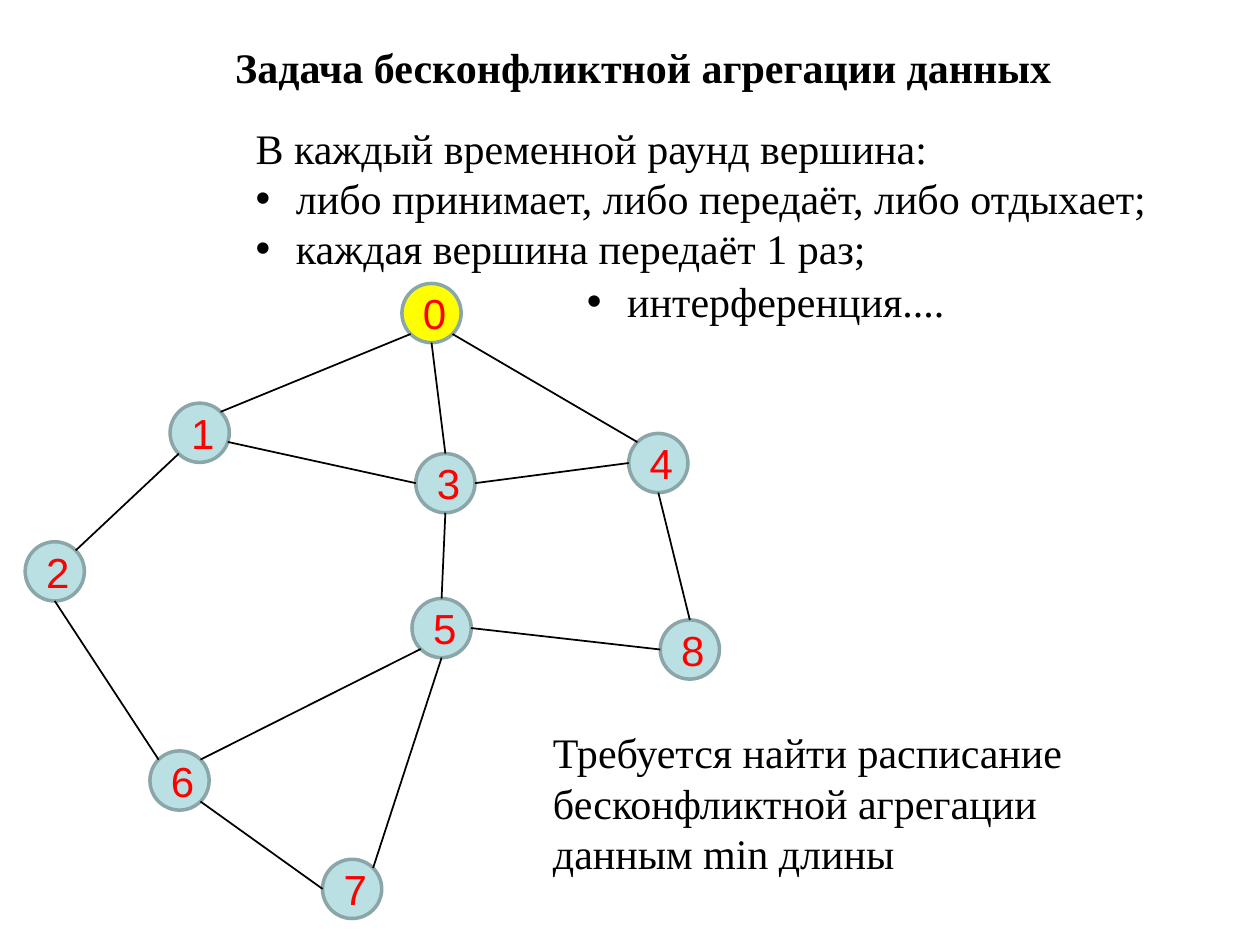
from math import cos, radians, sin

from lxml.etree import SubElement
from pptx import Presentation
from pptx.dml.color import RGBColor
from pptx.enum.shapes import MSO_CONNECTOR as Connector, MSO_SHAPE as Shape
from pptx.enum.text import MSO_ANCHOR as Anchor, MSO_AUTO_SIZE as AutoSize, PP_ALIGN as Align
from pptx.oxml.ns import qn
from pptx.util import Inches, Pt

CELL = Inches(0.1)  # the slide is a grid of 100 columns by 75 rows
COLUMNS, ROWS = 100, 75
COLORS = {
    "text": "000000",
    "edge": "000000",
    "digit": "FF0000",
    "node": "BBE0E3",
    "sink": "FFFF00",
    "outline": "8AA6A8",
}
SERIF = {"name": "Times New Roman", "size": Pt(24)}
SANS = {"name": "Arial", "size": Pt(24)}
BULLET_INDENT = 3.2

DIAMETER = 4.7
SINK = 0
# Node: left and top in cells, relative to the graph box
NODES = {
    0: (29.9, 0),
    1: (11.5, 9.5),
    2: (0, 20.5),
    3: (31, 13.5),
    4: (47.9, 11.9),
    5: (30.7, 25),
    6: (9.9, 37.1),
    7: (23.6, 45.7),
    8: (50.4, 26.7),
}
# Angles on a node's rim, clockwise from the right
SITES = {
    "right": 0, "right low": 18, "bottom right": 45, "bottom": 90, "bottom left": 135,
    "left": 180, "top left": 225, "top": 270, "top right": 315,
}
EDGES = [
    (0, "bottom", 3, "top"),
    (0, "bottom left", 1, "top right"),
    (0, "bottom right", 4, "top left"),
    (4, "left", 3, "right"),
    (2, "top right", 1, "bottom left"),
    (5, "top", 3, "bottom"),
    (4, "bottom", 8, "top"),
    (8, "left", 5, "right"),
    (1, "right low", 3, "left"),
    (6, "bottom right", 7, "left"),
    (6, "top right", 5, "bottom left"),
    (5, "bottom", 7, "top right"),
    (2, "bottom", 6, "top left"),
]


def cells(*counts):
    return [round(count * CELL) for count in counts]


def color(name):
    return RGBColor.from_string(COLORS[name])


def format_font(font, color_name, values):
    for key, value in values.items():
        setattr(font, key, value)
    font.color.rgb = color(color_name)


def add_bullet(paragraph):
    properties = paragraph._p.get_or_add_pPr()
    indent = cells(BULLET_INDENT)[0]
    properties.set("marL", str(indent))
    properties.set("indent", str(-indent))
    SubElement(properties, qn("a:buFont")).set("typeface", "Arial")
    SubElement(properties, qn("a:buChar")).set("char", "•")


def add_text(slide, box, lines, bullets_from=None, align=Align.LEFT, wrap=True, **extra):
    """Write one paragraph per line, bulleted from the given line onwards."""
    frame = slide.shapes.add_textbox(*cells(*box)).text_frame
    frame.word_wrap = wrap
    frame.auto_size = AutoSize.SHAPE_TO_FIT_TEXT
    for index, line in enumerate(lines):
        paragraph = frame.paragraphs[0] if index == 0 else frame.add_paragraph()
        paragraph.alignment = align
        run = paragraph.add_run()
        run.text = line
        format_font(run.font, "text", {**SERIF, **extra})
        if bullets_from is not None and index >= bullets_from:
            add_bullet(paragraph)


def add_node(slide, left, top, number):
    node = slide.shapes.add_shape(Shape.OVAL, *cells(left, top, DIAMETER, DIAMETER))
    node.shadow.inherit = False
    node.fill.solid()
    node.fill.fore_color.rgb = color("sink" if number == SINK else "node")
    node.line.color.rgb = color("outline")
    node.line.width = Pt(2)
    node.text_frame.vertical_anchor = Anchor.MIDDLE
    paragraph = node.text_frame.paragraphs[0]
    paragraph.alignment = Align.CENTER
    run = paragraph.add_run()
    run.text = str(number)
    format_font(run.font, "digit", SANS)


def add_edge(slide, start, end):
    edge = slide.shapes.add_connector(Connector.STRAIGHT, *cells(*start, *end))
    edge.line.color.rgb = color("edge")
    edge.line.width = Pt(1)
    SubElement(edge._element.spPr, qn("a:effectLst"))


def add_graph(slide, box):
    left, top = box[:2]
    radius = DIAMETER / 2

    def rim_point(number, site):
        column, row = NODES[number]
        angle = radians(SITES[site])
        return (left + column + radius * (1 + cos(angle)),
                top + row + radius * (1 + sin(angle)))

    for number, (column, row) in NODES.items():
        add_node(slide, left + column, top + row, number)
    for first, first_site, second, second_site in EDGES:
        add_edge(slide, rim_point(first, first_site), rim_point(second, second_site))


def main():
    presentation = Presentation()
    presentation.slide_width, presentation.slide_height = cells(COLUMNS, ROWS)
    slide = presentation.slides.add_slide(presentation.slide_layouts[6])
    add_text(slide, (17.3, 2.8, 67.5, 5), ["Задача бесконфликтной агрегации данных"],
             align=Align.CENTER, wrap=False, bold=True)
    add_graph(slide, (2, 22.5, 55.1, 50.4))
    add_text(slide, (19.3, 9.2, 79.5, 13.1), [
        "В каждый временной раунд вершина:",
        "либо принимает, либо передаёт, либо отдыхает;",
        "каждая вершина передаёт 1 раз;",
    ], bullets_from=1)
    add_text(slide, (45.6, 21.4, 44.6, 5), ["интерференция...."], bullets_from=0)
    add_text(slide, (42.9, 57.2, 51.2, 13.1),
             ["Требуется найти расписание бесконфликтной агрегации данным min длины"])
    presentation.save("out.pptx")


if __name__ == "__main__":
    main()
